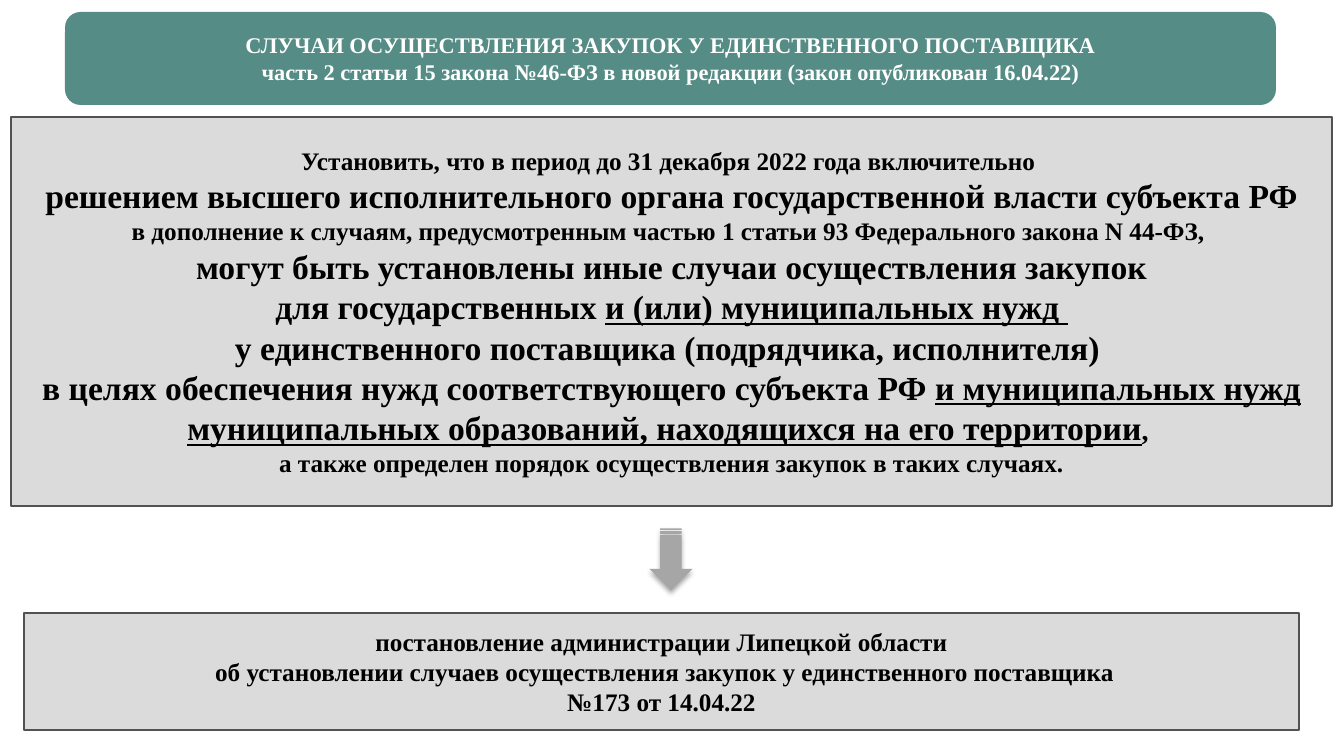
from lxml.etree import SubElement
from pptx import Presentation
from pptx.dml.color import RGBColor
from pptx.enum.shapes import MSO_SHAPE as Shape
from pptx.enum.text import MSO_ANCHOR as Anchor, PP_ALIGN as Align
from pptx.oxml.ns import qn
from pptx.util import Emu, Pt

PX = 914400 / 100.8
FONT = "Times New Roman"

TEAL = RGBColor(0x56, 0x8C, 0x86)
PALE_GREY = RGBColor(0xDB, 0xDB, 0xDB)
MID_GREY = RGBColor(0xA6, 0xA6, 0xA6)
DARK_GREY = RGBColor(0x52, 0x52, 0x52)
BLACK = RGBColor(0, 0, 0)
WHITE = RGBColor(0xFF, 0xFF, 0xFF)

SMALL, LARGE = 18, 24

# Each paragraph is a list of (text, size, underlined)
HEADING = [
    [("СЛУЧАИ ОСУЩЕСТВЛЕНИЯ ЗАКУПОК У ЕДИНСТВЕННОГО ПОСТАВЩИКА", 16, False)],
    [("часть 2 статьи 15 закона №46-ФЗ в новой редакции (закон опубликован 16.04.22)", 16, False)],
]
PROVISION = [
    [("Установить, что в период до 31 декабря 2022 года включительно ", SMALL, False)],
    [("решением высшего исполнительного органа государственной власти субъекта РФ", LARGE, False)],
    [("в дополнение к случаям, предусмотренным частью 1 статьи 93 Федерального закона N 44-ФЗ, ",
      SMALL, False)],
    [("могут быть установлены иные случаи осуществления закупок", LARGE, False)],
    [("для государственных ", LARGE, False), ("и (или) муниципальных нужд ", LARGE, True)],
    [("у единственного поставщика (подрядчика, исполнителя) ", LARGE, False)],
    [("в целях обеспечения нужд соответствующего субъекта РФ ", LARGE, False),
     ("и муниципальных нужд муниципальных образований, находящихся на его территории", LARGE, True),
     (", ", 20, False)],
    [("а также определен порядок осуществления закупок в таких случаях.", SMALL, False)],
]
RESOLUTION = [
    [("постановление администрации Липецкой области", SMALL, False)],
    [(" об установлении случаев осуществления закупок у единственного поставщика", SMALL, False)],
    [("№173 от 14.04.22", SMALL, False)],
]


def px(length):
    return Emu(round(length * PX))


def add_block(slide, kind, box, fill, line=None):
    """Add a filled preset shape; box is left, top, width, height in px."""
    block = slide.shapes.add_shape(kind, *map(px, box))
    block.shadow.inherit = False
    block.fill.solid()
    block.fill.fore_color.rgb = fill
    if line is None:
        block.line.fill.background()
    else:
        block.line.color.rgb = line
        block.line.width = Pt(1)
    return block


def write_text(block, paragraphs, color):
    frame = block.text_frame
    frame.word_wrap = True
    frame.vertical_anchor = Anchor.MIDDLE
    for number, parts in enumerate(paragraphs):
        paragraph = frame.add_paragraph() if number else frame.paragraphs[0]
        paragraph.alignment = Align.CENTER
        for text, size, underlined in parts:
            run = paragraph.add_run()
            run.text = text
            run.font.name = FONT
            run.font.size = Pt(size)
            run.font.bold = True
            run.font.underline = underlined
            run.font.color.rgb = color


def add_down_arrow(slide, box):
    arrow = add_block(slide, Shape.STRIPED_RIGHT_ARROW, box, MID_GREY)
    arrow.rotation = 90
    # Soft shadow falling straight down
    effects = arrow.element.spPr.find(qn("a:effectLst"))
    shadow = SubElement(effects, qn("a:outerShdw"), blurRad=str(Pt(3.5)),
                        dist=str(Pt(2.2)), dir="5400000", algn="ctr", rotWithShape="0")
    tint = SubElement(shadow, qn("a:srgbClr"), val=str(BLACK))
    SubElement(tint, qn("a:alpha"), val="32000")


def main():
    deck = Presentation()
    deck.slide_width, deck.slide_height = px(1344), px(756)
    slide = deck.slides.add_slide(deck.slide_layouts[6])

    # Provision of the law
    provision = add_block(slide, Shape.FLOWCHART_PROCESS, (11, 117, 1321, 389), PALE_GREY, DARK_GREY)
    write_text(provision, PROVISION, BLACK)

    # Heading banner
    heading = add_block(slide, Shape.ROUNDED_RECTANGLE, (65, 12, 1211, 93), TEAL)
    write_text(heading, HEADING, WHITE)

    # Arrow to the resulting regional resolution
    add_down_arrow(slide, (640, 538, 62, 43))
    resolution = add_block(slide, Shape.FLOWCHART_PROCESS, (24, 613, 1275, 117), PALE_GREY, DARK_GREY)
    write_text(resolution, RESOLUTION, BLACK)

    deck.save("out.pptx")


if __name__ == "__main__":
    main()
